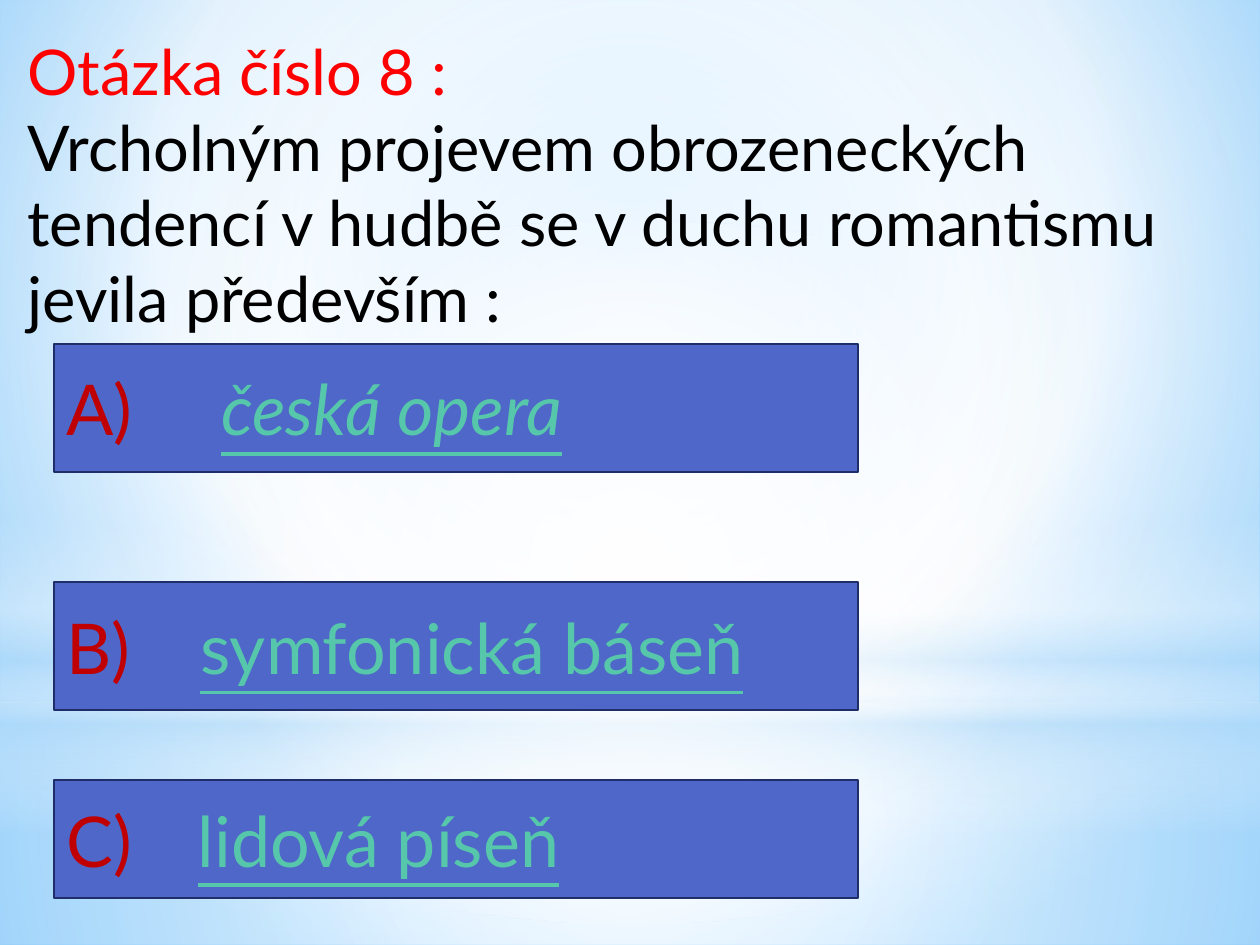
from dataclasses import dataclass

from lxml.etree import SubElement
from pptx import Presentation
from pptx.dml.color import RGBColor as Rgb
from pptx.enum.shapes import MSO_SHAPE as Shape
from pptx.enum.text import MSO_ANCHOR as Anchor, MSO_AUTO_SIZE as AutoSize, PP_ALIGN as Align
from pptx.oxml.ns import qn
from pptx.util import Cm, Pt

PAGE_WIDTH, PAGE_HEIGHT = 25.4, 19.05
TITLE_ONLY = 5
CENTRE = (50, 50, 50, 50)


@dataclass(frozen=True)
class Theme:
    font: str = "Lato"
    question_size: int = 36
    answer_size: int = 40
    heading: str = "FF0000"
    question: str = "000000"
    letter: str = "C00000"
    answer: str = "56C7AA"
    panel: str = "4E67C8"
    panel_line: str = "1F2E69"
    white: str = "FFFFFF"
    haze: str = "B4DCFA"
    sky: str = "9ED5FF"
    deep_sky: str = "5BB9FF"


THEME = Theme()


@dataclass(frozen=True)
class Box:
    left: float
    top: float
    width: float
    height: float

    def lengths(self):
        return [Cm(side) for side in (self.left, self.top, self.width, self.height)]


def apply_gradient(fill, owner, stops, focus=None):
    fill.solid()
    solid = next(owner.iter(qn("a:solidFill")))
    gradient = solid.makeelement(qn("a:gradFill"), {"rotWithShape": "1"})
    stop_list = SubElement(gradient, qn("a:gsLst"))
    for position, color, opacity in stops:
        stop = SubElement(stop_list, qn("a:gs"), pos=str(position * 1000))
        tint = SubElement(stop, qn("a:srgbClr"), val=color)
        if opacity < 100:
            SubElement(tint, qn("a:alpha"), val=str(opacity * 1000))
    if focus:
        circle = SubElement(gradient, qn("a:path"), {"path": "circle"})
        edges = {edge: str(share * 1000) for edge, share in zip("ltrb", focus)}
        SubElement(circle, qn("a:fillToRect"), edges)
    else:
        SubElement(gradient, qn("a:lin"), ang=str(90 * 60000), scaled="0")
    solid.getparent().replace(solid, gradient)


def style_run(span, size, color):
    span.font.name = THEME.font
    span.font.size = Pt(size)
    span.font.color.rgb = Rgb.from_string(color)


def add_glow(page, kind, box, stops, focus=None):
    glow = page.shapes.add_shape(kind, *box.lengths())
    glow.shadow.inherit = False
    glow.line.fill.background()
    apply_gradient(glow.fill, glow.element.spPr, stops, focus)


def add_backdrop(page, box):
    white, haze = THEME.white, THEME.haze
    sky = [(0, THEME.sky, 100), (60, white, 100), (100, THEME.deep_sky, 100)]
    apply_gradient(page.background.fill, page.element, sky, (20, 10, 20, 60))

    horizon = 14.17
    upper = Box(box.left, box.top, box.width, horizon)
    lower = Box(box.left, box.top + horizon, box.width, box.height - horizon)
    band = Box(box.left, box.top + 10.46, box.width, 6.35)
    halo = Box(box.left, box.top + 4.45, box.width, horizon)
    add_glow(page, Shape.RECTANGLE, lower,
             [(0, white, 91), (37, white, 76), (100, haze, 79)], CENTRE)
    add_glow(page, Shape.RECTANGLE, upper,
             [(0, white, 89), (48, white, 62), (100, haze, 79)], CENTRE)
    add_glow(page, Shape.RECTANGLE, band,
             [(0, white, 0), (29, white, 30), (45, haze, 40),
              (55, white, 26), (65, haze, 60), (100, white, 0)])
    add_glow(page, Shape.OVAL, halo, [(0, white, 100), (56, white, 0)], CENTRE)


def place_question(page, box, heading, question):
    title = page.shapes.title
    page.shapes.element.append(title.element)
    title.left, title.top, title.width, title.height = box.lengths()
    frame = title.text_frame
    frame.text = f"{heading}\v{question}"
    frame.word_wrap = True
    frame.auto_size = AutoSize.NONE
    frame.vertical_anchor = Anchor.TOP
    para = frame.paragraphs[0]
    para.alignment = Align.LEFT
    for span, color in zip(para.runs, (THEME.heading, THEME.question)):
        style_run(span, THEME.question_size, color)
    line_break = next(title.element.iter(qn("a:br")))
    SubElement(line_break, qn("a:rPr"), sz=str(THEME.question_size * 100))


def add_answer(page, box, letter, answer, tab, italic):
    panel = page.shapes.add_shape(Shape.RECTANGLE, *box.lengths())
    panel.shadow.inherit = False
    panel.fill.solid()
    panel.fill.fore_color.rgb = Rgb.from_string(THEME.panel)
    panel.line.color.rgb = Rgb.from_string(THEME.panel_line)
    panel.line.width = Pt(1.25)
    frame = panel.text_frame
    frame.word_wrap = True
    frame.vertical_anchor = Anchor.MIDDLE
    para = frame.paragraphs[0]
    para.alignment = Align.LEFT
    for text, color in ((f"{letter})\t", THEME.letter), (answer, THEME.answer)):
        span = para.add_run()
        span.text = text
        style_run(span, THEME.answer_size, color)
    span.font.underline = True
    span.font.italic = italic
    tabs = SubElement(para._p.get_or_add_pPr(), qn("a:tabLst"))
    SubElement(tabs, qn("a:tab"), pos=str(Cm(tab)), algn="l")


def add_answers(page, box):
    answers = [
        ("A", "česká opera", 0, 2.59, 3.12, True),
        ("B", "symfonická báseň", 4.8, 2.59, 2.7, False),
        ("C", "lidová píseň", 8.79, 2.39, 2.65, False),
    ]
    for letter, answer, offset, height, tab, italic in answers:
        panel_box = Box(box.left, box.top + offset, box.width, height)
        add_answer(page, panel_box, letter, answer, tab, italic)


def main():
    deck = Presentation()
    deck.slide_width, deck.slide_height = Cm(PAGE_WIDTH), Cm(PAGE_HEIGHT)
    page = deck.slides.add_slide(deck.slide_layouts[TITLE_ONLY])
    add_backdrop(page, Box(0, 0, PAGE_WIDTH, PAGE_HEIGHT))
    place_question(
        page, Box(0.3, 0.53, 24.61, 6.4), "Otázka číslo 8 :",
        "Vrcholným projevem obrozeneckých tendencí v hudbě "
        "se v duchu romantismu jevila především :")
    add_answers(page, Box(1.09, 6.93, 16.21, 11.18))
    deck.save("out.pptx")


if __name__ == "__main__":
    main()
